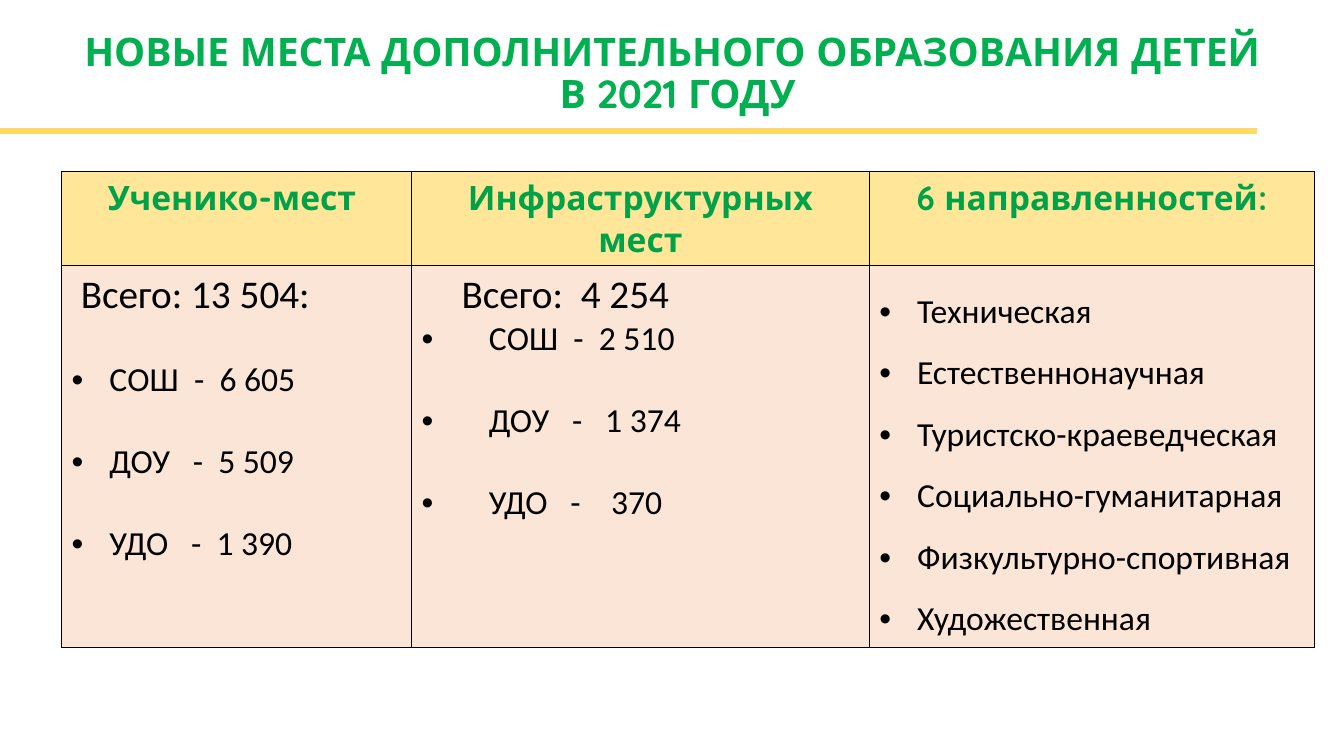
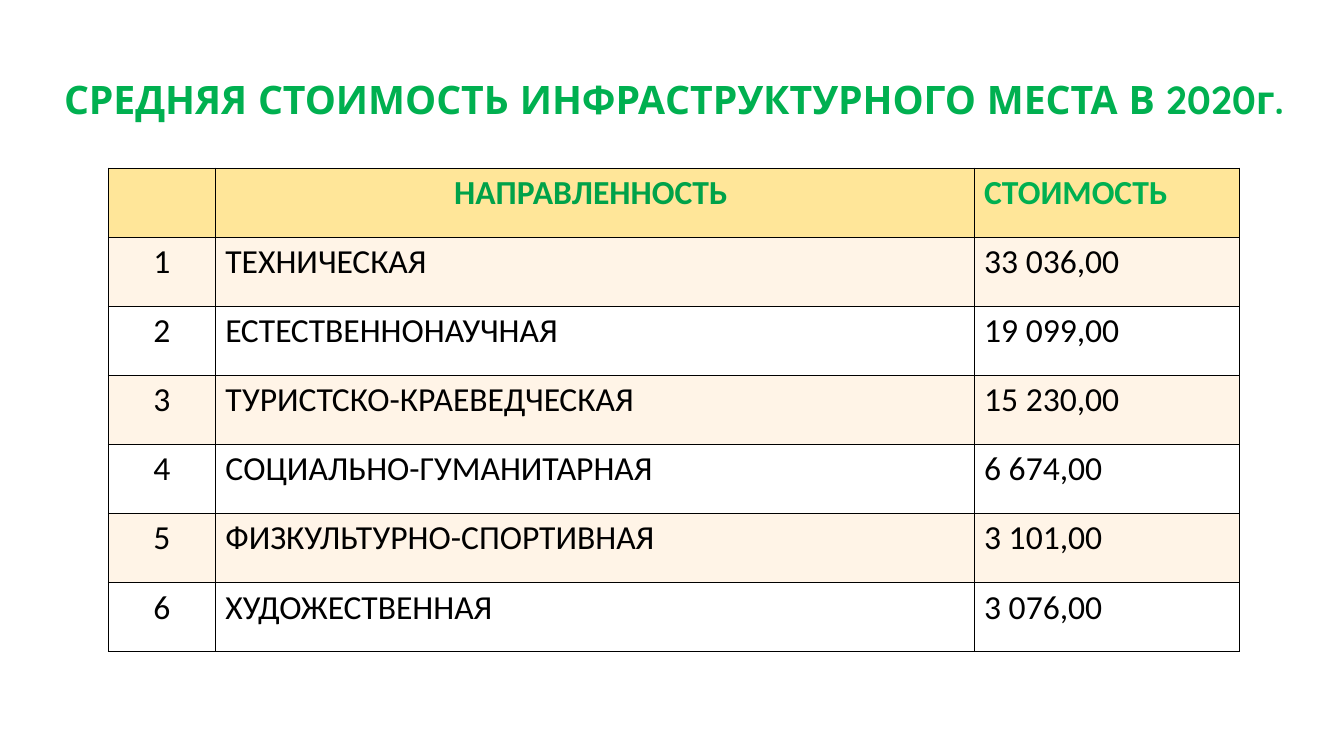
from dataclasses import dataclass, replace

from lxml import etree
from pptx import Presentation
from pptx.dml.color import RGBColor
from pptx.enum.shapes import MSO_CONNECTOR
from pptx.enum.text import MSO_ANCHOR, MSO_AUTO_SIZE, PP_ALIGN
from pptx.oxml.ns import qn
from pptx.util import Pt

LEFT, CENTER = PP_ALIGN.LEFT, PP_ALIGN.CENTER
MIDDLE = MSO_ANCHOR.MIDDLE
NO_AUTOFIT = MSO_AUTO_SIZE.NONE
STRAIGHT = MSO_CONNECTOR.STRAIGHT

GREEN = RGBColor(0x00, 0xB0, 0x50)
DARK_GREEN = RGBColor(0x00, 0xA2, 0x49)
GOLD = RGBColor(0xFF, 0xD9, 0x66)
HEADER_FILL = RGBColor(0xFF, 0xE6, 0x99)
PEACH = RGBColor(0xFB, 0xE5, 0xD6)
CREAM = RGBColor(0xFF, 0xF4, 0xE7)
WHITE = RGBColor(0xFF, 0xFF, 0xFF)
BLACK = RGBColor(0x00, 0x00, 0x00)


@dataclass(frozen=True)
class TextStyle:
    size: float = 24
    font: str = "Calibri"
    color: RGBColor = BLACK
    bold: bool = False
    align: PP_ALIGN = LEFT
    spacing: float = 1.0
    indent: float = 0
    bullet: bool = False


BODY = TextStyle()
BODY_CENTERED = replace(BODY, align=CENTER)
TITLE = TextStyle(28, "Quicksand", GREEN, True, CENTER, 0.9)
HEADER = replace(BODY_CENTERED, color=DARK_GREEN, bold=True)
TOTAL = replace(BODY, size=28)
BULLET = replace(BODY, bullet=True, indent=27, spacing=2.0)


class Slides:
    """Holds the deck, its shared style and the current page."""

    def __init__(self):
        self.deck = Presentation()
        self.deck.slide_width, self.deck.slide_height = Pt(960), Pt(540)
        self.page = None

    def new_page(self, title, left, top, width, height):
        self.page = self.deck.slides.add_slide(self.deck.slide_layouts[5])
        box = self.page.shapes.title
        box.left, box.top, box.width, box.height = map(Pt, (left, top, width, height))
        frame = box.text_frame
        frame.auto_size = NO_AUTOFIT
        frame.word_wrap = True
        frame.vertical_anchor = MIDDLE
        self.fill_text(frame, [(title, TITLE)])

    def fill_text(self, frame, lines):
        """Fill a text frame with (text, style) paragraphs."""
        frame.text = "\n".join(text for text, _ in lines)
        for para, (_, style) in zip(frame.paragraphs, lines):
            para.alignment = style.align
            para.line_spacing = style.spacing
            props = para._p.get_or_add_pPr()
            if style.indent:
                props.set("marL", str(Pt(style.indent)))
            if style.bullet:
                props.set("indent", str(-Pt(style.indent)))
                etree.SubElement(props, qn("a:buFont")).set("typeface", "Arial")
                etree.SubElement(props, qn("a:buChar")).set("char", "•")
            for span in para.runs:
                span.font.size = Pt(style.size)
                span.font.name = style.font
                span.font.bold = style.bold
                span.font.color.rgb = style.color

    def rule(self, left, right, y, weight):
        line = self.page.shapes.add_connector(STRAIGHT, Pt(left), Pt(y), Pt(right), Pt(y))
        line.line.color.rgb = GOLD
        line.line.width = Pt(weight)
        etree.SubElement(line._element.spPr, qn("a:effectLst"))

    def table(self, left, top, widths, heights, rows, fills, border):
        """Each cell of rows is a list of (text, style) paragraphs."""
        frame = self.page.shapes.add_table(
            len(heights), len(widths), Pt(left), Pt(top), Pt(sum(widths)), Pt(sum(heights)))
        table = frame.table
        table.first_row = table.horz_banding = False
        for column, width in zip(table.columns, widths):
            column.width = Pt(width)
        for row, height, contents, fill in zip(table.rows, heights, rows, fills):
            row.height = Pt(height)
            for cell, lines in zip(row.cells, contents):
                cell.fill.solid()
                cell.fill.fore_color.rgb = fill
                self.borders(cell, border)
                self.fill_text(cell.text_frame, lines)

    def borders(self, cell, weight):
        props = cell._tc.get_or_add_tcPr()
        for place, side in enumerate(("lnL", "lnR", "lnT", "lnB")):
            edge = etree.Element(qn(f"a:{side}"), w=str(Pt(weight)))
            paint = etree.SubElement(edge, qn("a:solidFill"))
            etree.SubElement(paint, qn("a:srgbClr")).set("val", str(BLACK))
            props.insert(place, edge)


def places_page(slides):
    slides.new_page("НОВЫЕ МЕСТА ДОПОЛНИТЕЛЬНОГО ОБРАЗОВАНИЯ ДЕТЕЙ \vВ 2021 ГОДУ",
                    28, 38, 912, 31)
    slides.rule(0, 898, 93.6, 4.5)

    # Places and the six directions
    heading = replace(HEADER, font="Quicksand")
    headings = ("Ученико-мест ", "Инфраструктурных мест", "6 направленностей:")
    wide_bullet = replace(BULLET, indent=48)
    directions = ("Техническая", "Естественнонаучная", "Туристско-краеведческая",
                  "Социально-гуманитарная", "Физкультурно-спортивная", "Художественная")
    pupil_places = [
        ("Всего: 13 504:", replace(TOTAL, indent=6.5)),
        ("СОШ  -  6 605", BULLET),
        ("ДОУ   -  5 509", BULLET),
        ("УДО   -  1 390", BULLET),
    ]
    built_places = [
        ("Всего:  4 254", replace(TOTAL, indent=28.5)),
        ("СОШ  -  2 510", replace(wide_bullet, spacing=1.0)),
        ("ДОУ   -   1 374", wide_bullet),
        ("УДО   -    370", wide_bullet),
    ]
    direction_list = [(name, replace(BULLET, spacing=1.5)) for name in directions]
    slides.table(44, 122.5, (250, 327, 318), (67, 273),
                 [[[(text, heading)] for text in headings],
                  [pupil_places, built_places, direction_list]],
                 (HEADER_FILL, PEACH), 1)


def cost_page(slides):
    slides.new_page("СРЕДНЯЯ СТОИМОСТЬ ИНФРАСТРУКТУРНОГО МЕСТА В 2020г.",
                    11.5, 12, 940, 121)

    # Average cost by direction
    costs = (
        ("ТЕХНИЧЕСКАЯ", "33 036,00"),
        ("ЕСТЕСТВЕННОНАУЧНАЯ", "19 099,00"),
        ("ТУРИСТСКО-КРАЕВЕДЧЕСКАЯ", "15 230,00"),
        ("СОЦИАЛЬНО-ГУМАНИТАРНАЯ", "6 674,00"),
        ("ФИЗКУЛЬТУРНО-СПОРТИВНАЯ", "3 101,00"),
        ("ХУДОЖЕСТВЕННАЯ", "3 076,00"),
    )
    rows = [[[("", HEADER)], [("НАПРАВЛЕННОСТЬ ", HEADER)],
             [("СТОИМОСТЬ", replace(HEADER, color=GREEN, align=LEFT))]]]
    for number, (name, cost) in enumerate(costs, 1):
        rows.append([[(str(number), BODY_CENTERED)], [(name, BODY)], [(cost, BODY)]])
    fills = [HEADER_FILL] + [CREAM, WHITE] * 3
    slides.table(77.3, 120, (76.5, 542, 189.5), [49.3] * len(rows), rows, fills, 0.5)


def main():
    slides = Slides()
    places_page(slides)
    cost_page(slides)
    slides.deck.save("out.pptx")


if __name__ == "__main__":
    main()
